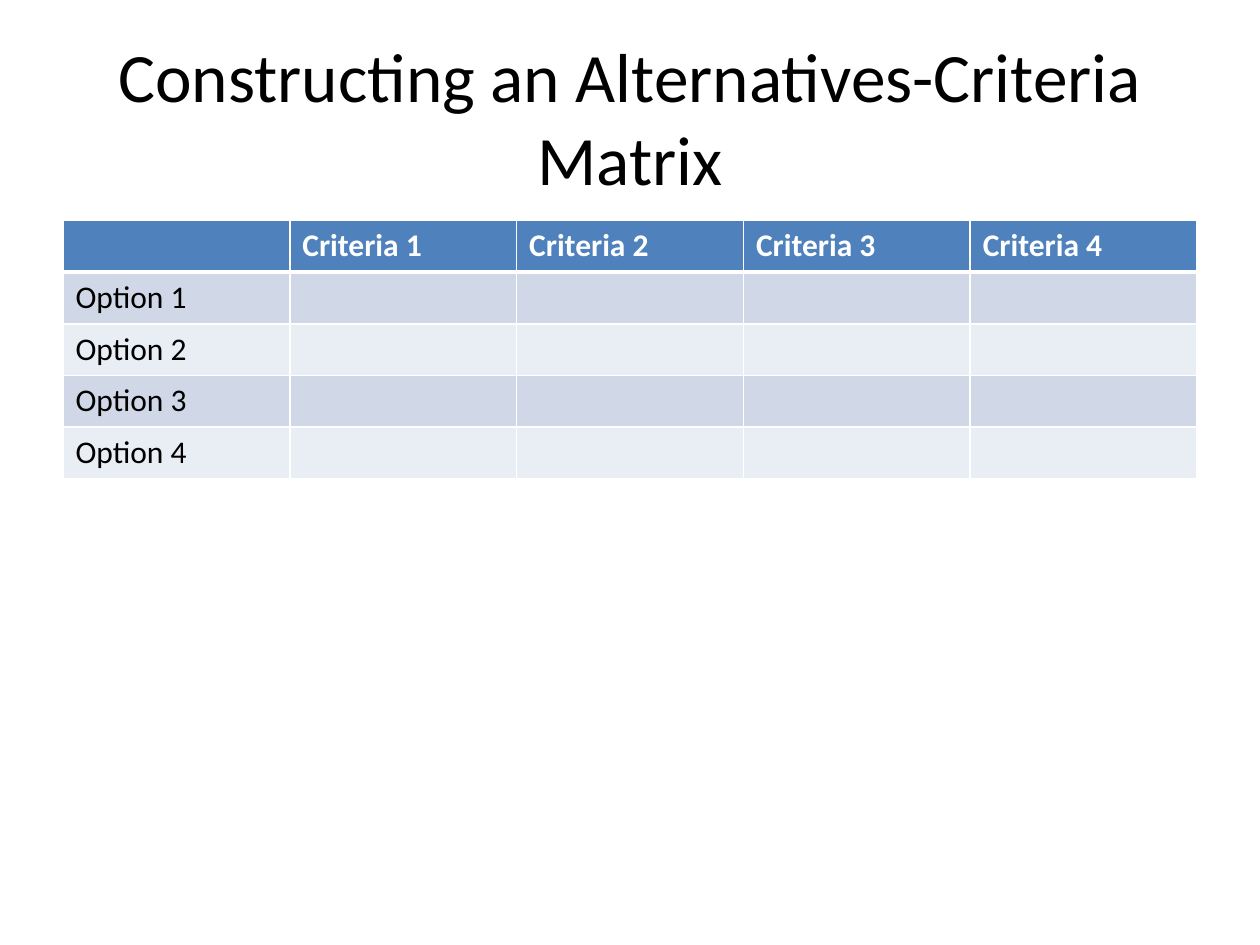
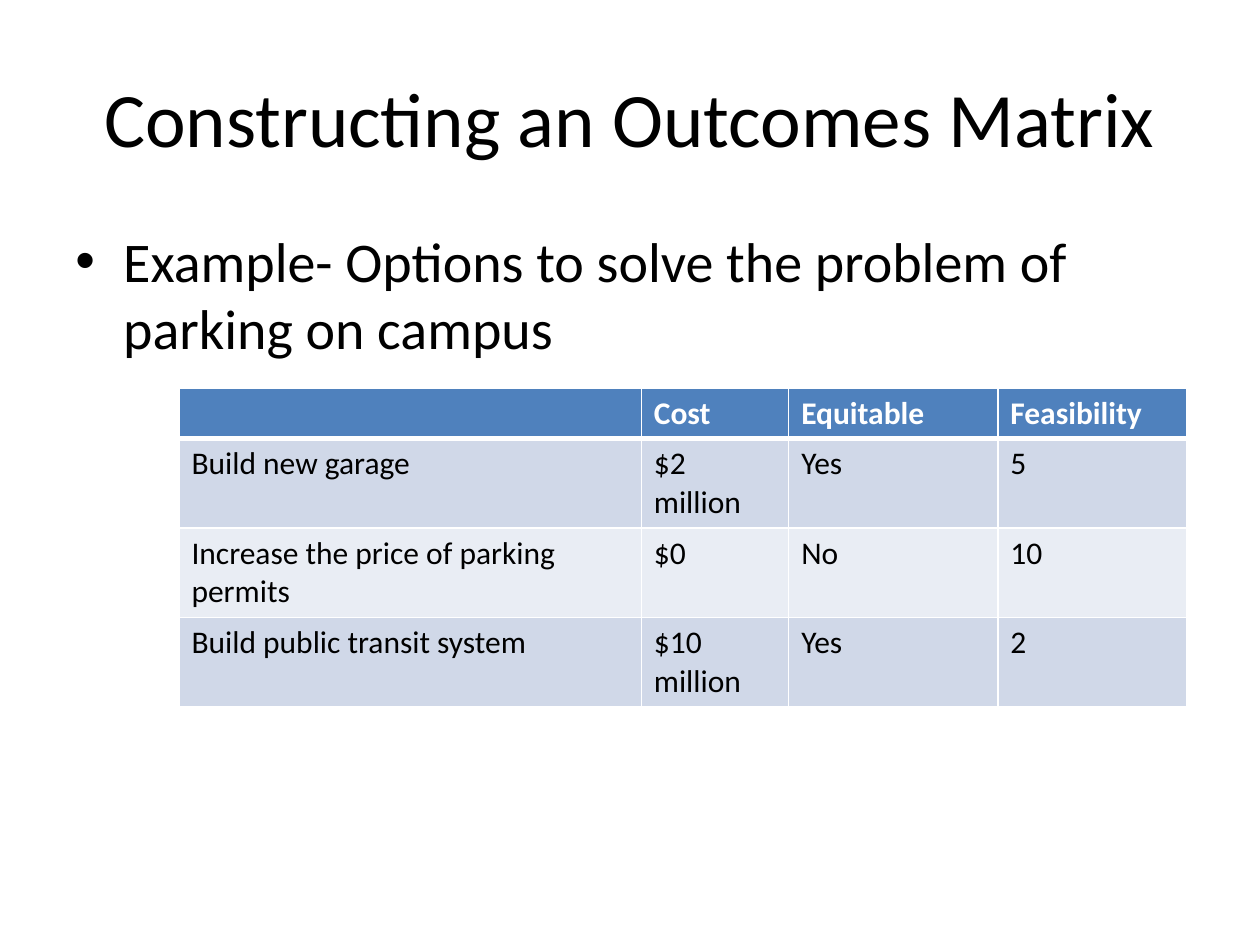
from pptx import Presentation
from pptx.dml.color import RGBColor
from pptx.enum.text import MSO_ANCHOR, PP_ALIGN
from pptx.oxml import parse_xml
from pptx.oxml.ns import nsdecls
from pptx.util import Inches, Pt

MIDDLE = MSO_ANCHOR.MIDDLE
CENTER = PP_ALIGN.CENTER

FONT = "Calibri"
BLACK = RGBColor(0x00, 0x00, 0x00)
WHITE = RGBColor(0xFF, 0xFF, 0xFF)
HEADER_BLUE = RGBColor(0x4F, 0x81, 0xBD)
BANDS = (RGBColor(0xD0, 0xD8, 0xE8), RGBColor(0xE9, 0xED, 0xF4))

MARGIN = 0.5
CONTENT_WIDTH = 9


def style_text(paragraph, size, color=BLACK, bold=False):
    for run in paragraph.runs:
        run.font.name = FONT
        run.font.size = Pt(size)
        run.font.color.rgb = color
        run.font.bold = bold


def add_text(slide, text, top, height, size):
    box = slide.shapes.add_textbox(
        Inches(MARGIN), Inches(top), Inches(CONTENT_WIDTH), Inches(height))
    frame = box.text_frame
    frame.word_wrap = True
    frame.text = text
    style_text(frame.paragraphs[0], size)
    return frame


def add_title(slide, text, size):
    frame = add_text(slide, text, 0.3, 1.25, size)
    frame.vertical_anchor = MIDDLE
    frame.paragraphs[0].alignment = CENTER


def add_bullet(slide, text):
    frame = add_text(slide, text, 1.75, 4.95, 32)
    properties = frame.paragraphs[0]._p.get_or_add_pPr()
    indent = Inches(0.38)
    properties.set("marL", str(indent))
    properties.set("indent", str(-indent))
    properties.append(parse_xml(f'<a:buFont {nsdecls("a")} typeface="Arial"/>'))
    properties.append(parse_xml(f'<a:buChar {nsdecls("a")} char="•"/>'))


def add_borders(cell, top=1, bottom=1):
    """Draw white lines round the cell, with widths in points."""
    properties = cell._tc.get_or_add_tcPr()
    for side, width in (("L", 1), ("R", 1), ("T", top), ("B", bottom)):
        properties.append(parse_xml(
            f'<a:ln{side} {nsdecls("a")} w="{Pt(width)}"><a:solidFill>'
            f'<a:srgbClr val="{WHITE}"/></a:solidFill></a:ln{side}>'))


def add_matrix(slide, rows, left, top, column_widths, row_heights):
    """Add a table with a blue header row and banded rows below it."""
    matrix = slide.shapes.add_table(
        len(rows), len(column_widths), Inches(left), Inches(top),
        Inches(sum(column_widths)), Inches(sum(row_heights))).table
    for column, width in zip(matrix.columns, column_widths):
        column.width = Inches(width)
    for r, (values, height) in enumerate(zip(rows, row_heights)):
        matrix.rows[r].height = Inches(height)
        header = r == 0
        for c, value in enumerate(values):
            cell = matrix.cell(r, c)
            add_borders(cell, top=3 if r == 1 else 1, bottom=3 if header else 1)
            cell.fill.solid()
            cell.fill.fore_color.rgb = HEADER_BLUE if header else BANDS[(r - 1) % 2]
            cell.text = value
            style_text(cell.text_frame.paragraphs[0], 18,
                       WHITE if header else BLACK, header)


def build_alternatives_slide(slide):
    add_title(slide, "Constructing an Alternatives-Criteria Matrix", 39.6)
    numbers = range(1, 5)
    rows = [[""] + [f"Criteria {n}" for n in numbers]]
    rows += [[f"Option {n}"] + [""] * len(numbers) for n in numbers]
    add_matrix(slide, rows, MARGIN, 1.75, [CONTENT_WIDTH / 5] * 5, [0.41] * 5)


def build_outcomes_slide(slide):
    add_title(slide, "Constructing an Outcomes Matrix", 44)
    add_bullet(slide, "Example- Options to solve the problem of parking on campus")
    rows = [
        ["", "Cost", "Equitable", "Feasibility"],
        ["Build new garage", "$2 million", "Yes", "5"],
        ["Increase the price of parking permits", "$0", "No", "10"],
        ["Build public transit system", "$10 million", "Yes", "2"],
    ]
    add_matrix(slide, rows, 1.42, 3.08, [3.67, 1.17, 1.66, 1.5], [0.4] + [0.71] * 3)


def main():
    deck = Presentation()
    deck.slide_width = Inches(10)
    deck.slide_height = Inches(7.5)
    blank = deck.slide_layouts[6]
    for build in (build_alternatives_slide, build_outcomes_slide):
        build(deck.slides.add_slide(blank))
    deck.save("out.pptx")


if __name__ == "__main__":
    main()
